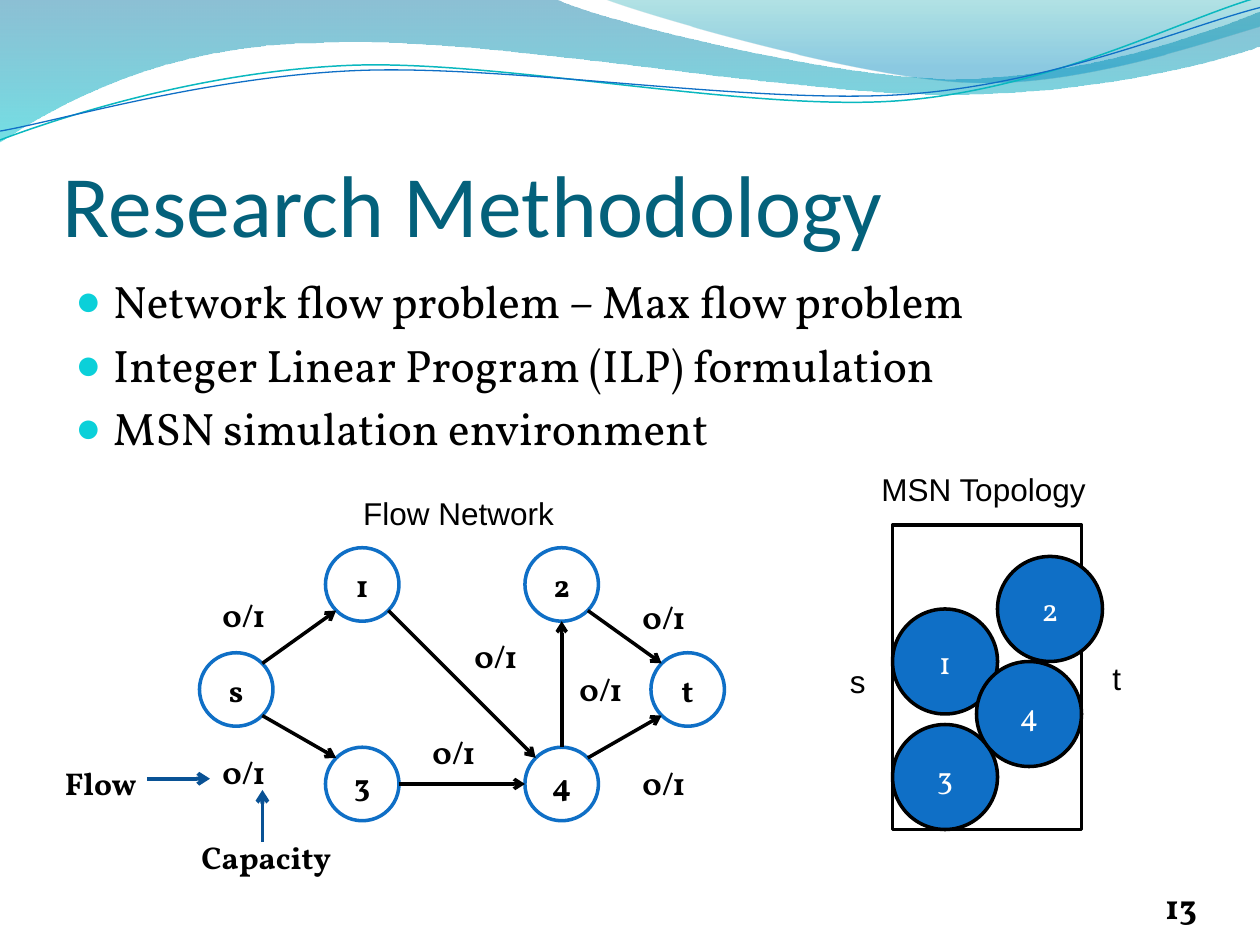
from lxml import etree
from pptx import Presentation
from pptx.dml.color import RGBColor
from pptx.enum.shapes import MSO_CONNECTOR, MSO_SHAPE
from pptx.enum.text import MSO_ANCHOR, PP_ALIGN
from pptx.oxml.ns import qn
from pptx.util import Pt

LEFT, CENTER, RIGHT = PP_ALIGN.LEFT, PP_ALIGN.CENTER, PP_ALIGN.RIGHT
TOP, MIDDLE, BOTTOM = MSO_ANCHOR.TOP, MSO_ANCHOR.MIDDLE, MSO_ANCHOR.BOTTOM
OVAL, RECTANGLE = MSO_SHAPE.OVAL, MSO_SHAPE.RECTANGLE
STRAIGHT = MSO_CONNECTOR.STRAIGHT

BLACK, WHITE, BLUE, DARK_BLUE = "000000", "FFFFFF", "0F6FC6", "095295"
SERIF, SANS = "Vollkorn", "Arial"

TITLE = "Research Methodology"
BULLETS = [
    "Network flow problem – Max flow problem",
    "Integer Linear Program (ILP) formulation",
    "MSN simulation environment",
]

# Outlines: one point is a straight segment, three points are a Bézier curve.
# Gradient stops: position, colour, opacity in percent.
WAVES = [
    ([[(0, -0.7)], [(317, -0.7)],
      [(343, 12), (478, 45), (546, 45)], [(614, 45), (690, 19), (720, 6.5)],
      [(720.7, 26)], [(708, 32), (626, 55), (537, 54)],
      [(448, 54), (275, 20), (185, 24.5)], [(93, 25), (33, 60), (-0.7, 81.4)]],
     [(0, "0074A1", 45), (1, "00C6CF", 55)]),
    ([[(345, -0.7)], [(366.5, 8), (491, 44.6), (553.7, 46.8)],
      [(616.3, 49.7), (692, 23), (720, 15)], [(720, 0)]],
     [(0, "00A1A9", 30), (0.8, "008BBF", 45)]),
]
WAVE_LINES = [
    ([[(0, 80)], [(34.6, 67), (113.8, 41), (199.4, 37.4)],
      [(284.4, 33.8), (427, 64), (513.4, 57.6)],
      [(599.8, 51.1), (675.4, 10.8), (718.6, -1.4)]], "0AB8BF", 0.85),
    ([[(0, 74.9)], [(33.8, 69.1), (118, 43.9), (203.8, 40.3)],
      [(290.2, 36.7), (429.8, 59.8), (516.2, 54)],
      [(601.9, 48.2), (677.5, 15.1), (720, 4.3)]], BLUE, 0.75),
]

NODE_SIZE = 42
NODES = {"s": (114, 373), "3": (186, 427), "1": (186, 313),
         "4": (300, 427), "2": (300, 313), "t": (372, 373)}
DIAGONAL = 0.71
SIDES = {"N": (0, -1), "S": (0, 1), "E": (1, 0), "W": (-1, 0),
         "NE": (DIAGONAL, -DIAGONAL), "NW": (-DIAGONAL, -DIAGONAL),
         "SE": (DIAGONAL, DIAGONAL), "SW": (-DIAGONAL, DIAGONAL)}
EDGES = [("s", "NE", "1", "SW"), ("s", "SE", "3", "NW"), ("3", "E", "4", "W"),
         ("2", "SE", "t", "NW"), ("4", "NE", "t", "SW"), ("1", "SE", "4", "NW"),
         ("4", "N", "2", "S")]
EDGE_LABEL = "0/1"
EDGE_LABEL_PLACES = [(120, 337), (120, 427), (360, 338.4), (360, 433),
                     (240, 415.4), (264, 360.4), (324, 379.4)]
LEGEND = [("Capacity", 108, 475.2, 114), ("Flow", 30, 433, 84)]
LEGEND_ARROWS = [((150, 481), (150, 451.4)), ((84, 445), (120, 445))]

AREA = (510, 300, 108, 174)
SENSOR_SIZE = 60
SENSORS = [("1", 510, 348), ("3", 510, 414), ("4", 558, 378), ("2", 570, 318)]
CAPTIONS = [("MSN Topology", 496.6, 265, 133), ("Flow Network", 200.5, 278.6, 124),
            ("s", 478.6, 374.7, 24), ("t", 628.6, 373, 20)]
LABEL_HEIGHT = 28.8


def color(value):
    return RGBColor.from_string(value)


def add_run(paragraph, text, font, size, text_color, bold=False):
    run = paragraph.add_run()
    run.text = text
    run.font.name, run.font.size, run.font.bold = font, Pt(size), bold
    run.font.color.rgb = color(text_color)


def add_text(slide, box, text, font=SERIF, size=18, text_color=BLACK, bold=False,
             align=LEFT, anchor=TOP, insets=(7.2, 3.6, 7.2, 3.6), wrap=True):
    frame = slide.shapes.add_textbox(*map(Pt, box)).text_frame
    frame.word_wrap, frame.vertical_anchor = wrap, anchor
    (frame.margin_left, frame.margin_top,
     frame.margin_right, frame.margin_bottom) = map(Pt, insets)
    frame.paragraphs[0].alignment = align
    add_run(frame.paragraphs[0], text, font, size, text_color, bold)


def add_bullets(slide, box, items):
    frame = slide.shapes.add_textbox(*map(Pt, box)).text_frame
    frame.word_wrap = True
    for index, item in enumerate(items):
        paragraph = frame.add_paragraph() if index else frame.paragraphs[0]
        paragraph.space_before = Pt(5.2)
        add_run(paragraph, item, SERIF, 26, BLACK)
        properties = paragraph._p.get_or_add_pPr()
        properties.set("marL", str(Pt(21.6)))
        properties.set("indent", str(-Pt(21.6)))
        bullet_color = etree.SubElement(properties, qn("a:buClr"))
        etree.SubElement(bullet_color, qn("a:srgbClr"), val="0BD0D9")
        etree.SubElement(properties, qn("a:buSzPct"), val="95000")
        etree.SubElement(properties, qn("a:buFont"), typeface=SANS)
        etree.SubElement(properties, qn("a:buChar"), char="●")


def add_block(slide, kind, box, fill, line, text="", text_color=BLACK, bold=False):
    shape = slide.shapes.add_shape(kind, *map(Pt, box))
    shape.shadow.inherit = False
    shape.fill.solid()
    shape.fill.fore_color.rgb = color(fill)
    shape.line.color.rgb, shape.line.width = color(line), Pt(2)
    if text:
        shape.text_frame.vertical_anchor = MIDDLE
        paragraph = shape.text_frame.paragraphs[0]
        paragraph.alignment = CENTER
        add_run(paragraph, text, SERIF, 18, text_color, bold)


def add_arrow(slide, start, end, line, width):
    arrow = slide.shapes.add_connector(STRAIGHT, *map(Pt, (*start, *end)))
    arrow.line.color.rgb, arrow.line.width = color(line), Pt(width)
    etree.SubElement(arrow.line._get_or_add_ln(), qn("a:tailEnd"), type="arrow")
    etree.SubElement(arrow._element.spPr, qn("a:effectLst"))


def add_outline(slide, segments, close):
    """Build a freeform through the segment ends, then bend its Bézier segments."""
    first, *rest = [(Pt(segment[-1][0]), Pt(segment[-1][1])) for segment in segments]
    builder = slide.shapes.build_freeform(*first, scale=1.0)
    builder.add_line_segments(rest, close=close)
    shape = builder.convert_to_shape()
    shape.shadow.inherit = False
    outline = next(shape._element.spPr.iter(qn("a:path")))
    for segment, step in zip(segments, list(outline)):
        if len(segment) == 3:
            curve = etree.Element(qn("a:cubicBezTo"))
            for x, y in segment:
                etree.SubElement(curve, qn("a:pt"), x=str(Pt(x) - shape.left),
                                 y=str(Pt(y) - shape.top))
            outline.replace(step, curve)
    return shape


def add_wave(slide, segments, stops):
    shape = add_outline(slide, segments, True)
    shape.line.fill.background()
    shape.fill.gradient()
    shape.fill.gradient_angle = 270
    for stop, (position, value, _) in zip(shape.fill.gradient_stops, stops):
        stop.position, stop.color.rgb = position, color(value)
    fill_colors = shape._element.spPr.iter(qn("a:srgbClr"))
    for fill_color, (_, _, opacity) in zip(list(fill_colors), stops):
        etree.SubElement(fill_color, qn("a:alpha"), val=str(opacity * 1000))


def node_point(name, side):
    """Return the point of a node's circle that lies on the given side."""
    radius = NODE_SIZE / 2
    return [corner + radius * (1 + way) for corner, way in zip(NODES[name], SIDES[side])]


def main():
    presentation = Presentation()
    presentation.slide_width, presentation.slide_height = Pt(720), Pt(540)
    slide = presentation.slides.add_slide(presentation.slide_layouts[6])

    for segments, stops in WAVES:
        add_wave(slide, segments, stops)
    for segments, line, width in WAVE_LINES:
        shape = add_outline(slide, segments, False)
        shape.fill.background()
        shape.line.color.rgb, shape.line.width = color(line), Pt(width)

    add_text(slide, (36, 55.5, 648, 90), TITLE, "Calibri", 50, "04617B",
             anchor=BOTTOM, insets=(0, 3.6, 0, 0))
    add_bullets(slide, (36, 152.6, 648, 345.6), BULLETS)
    add_text(slide, (624, 500.4, 60, 28.8), "13", size=20, bold=True,
             align=RIGHT, anchor=BOTTOM, insets=(0, 0, 0, 0))

    for name, place in NODES.items():
        add_block(slide, OVAL, (*place, NODE_SIZE, NODE_SIZE), WHITE, BLUE, name, bold=True)
    for source, source_side, target, target_side in EDGES:
        add_arrow(slide, node_point(source, source_side),
                  node_point(target, target_side), BLACK, 2)
    for start, end in LEGEND_ARROWS:
        add_arrow(slide, start, end, DARK_BLUE, 2.25)
    edge_labels = [(EDGE_LABEL, x, y, NODE_SIZE) for x, y in EDGE_LABEL_PLACES]
    for text, x, y, width in edge_labels + LEGEND:
        add_text(slide, (x, y, width, LABEL_HEIGHT), text, bold=True)

    add_block(slide, RECTANGLE, AREA, WHITE, BLACK)
    for name, x, y in SENSORS:
        add_block(slide, OVAL, (x, y, SENSOR_SIZE, SENSOR_SIZE), BLUE, BLACK, name, WHITE)
    for text, x, y, width in CAPTIONS:
        add_text(slide, (x, y, width, LABEL_HEIGHT), text, SANS, wrap=False)

    presentation.save("out.pptx")


if __name__ == "__main__":
    main()
